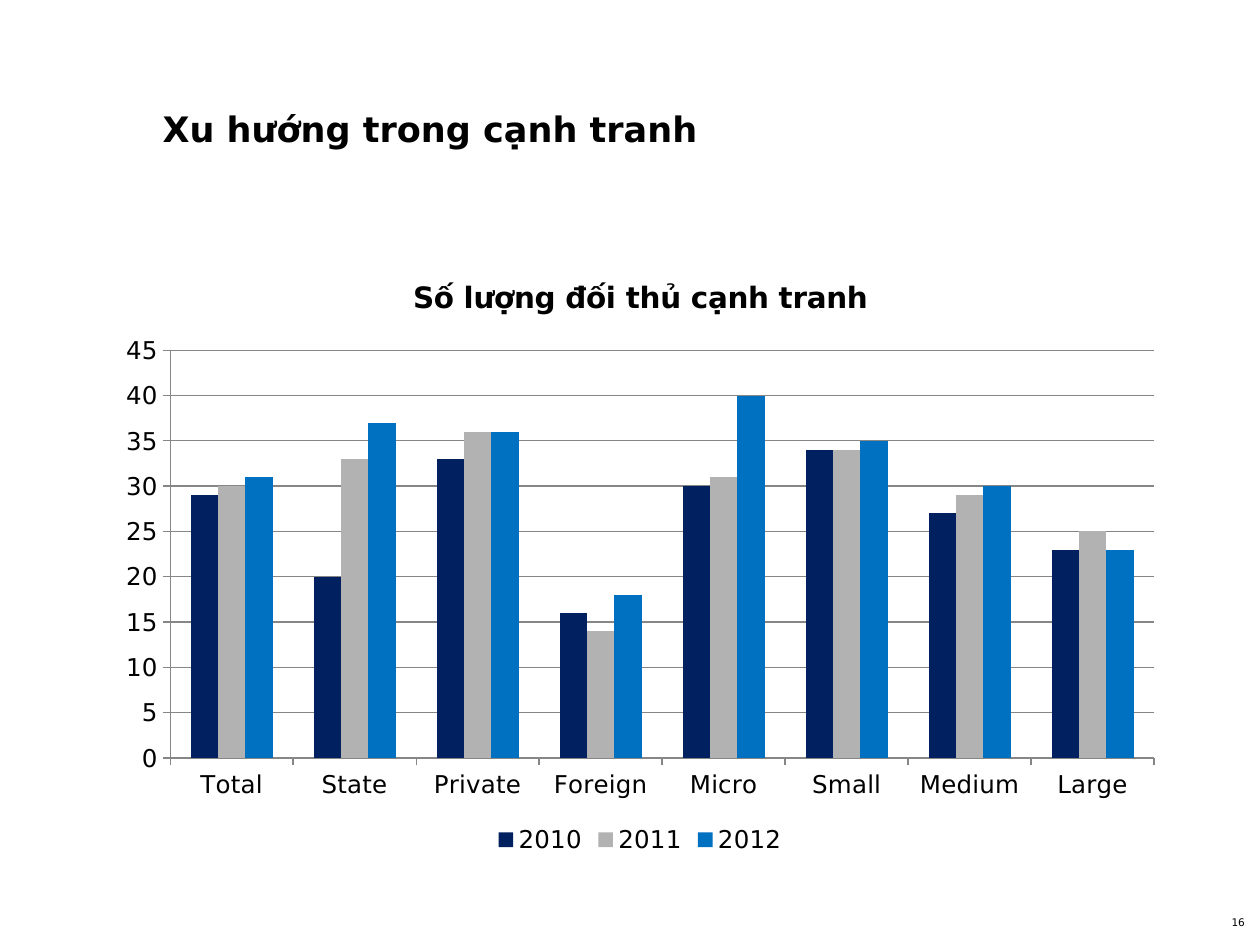
from pptx import Presentation
from pptx.chart.data import CategoryChartData
from pptx.dml.color import RGBColor
from pptx.enum.chart import XL_CHART_TYPE, XL_LEGEND_POSITION, XL_TICK_MARK
from pptx.enum.text import MSO_ANCHOR, PP_ALIGN
from pptx.util import Inches, Pt

BLACK = RGBColor(0x00, 0x00, 0x00)
NAVY = RGBColor(0x00, 0x20, 0x60)
SILVER = RGBColor(0xB2, 0xB2, 0xB2)
BLUE = RGBColor(0x00, 0x70, 0xC0)
AXIS_GRAY = RGBColor(0x86, 0x86, 0x86)
FONT = "DejaVu Sans"
CLUSTERED = XL_CHART_TYPE.COLUMN_CLUSTERED
BOTTOM = XL_LEGEND_POSITION.BOTTOM
OUTSIDE = XL_TICK_MARK.OUTSIDE
MIDDLE, TOP = MSO_ANCHOR.MIDDLE, MSO_ANCHOR.TOP
LEFT, RIGHT = PP_ALIGN.LEFT, PP_ALIGN.RIGHT

CATEGORIES = ["Total", "State", "Private", "Foreign",
              "Micro", "Small", "Medium", "Large"]
YEARS = [
    ("2010", [29, 20, 33, 16, 30, 34, 27, 23], NAVY),
    ("2011", [30, 33, 36, 14, 31, 34, 29, 25], SILVER),
    ("2012", [31, 37, 36, 18, 40, 35, 30, 23], BLUE),
]


def style_font(font, size, bold=False):
    font.name = FONT
    font.size = Pt(size)
    font.bold = bold
    font.color.rgb = BLACK


def add_text(slide, text, left, top, width, height, size, bold, align, anchor):
    frame = slide.shapes.add_textbox(
        Inches(left), Inches(top), Inches(width), Inches(height)).text_frame
    frame.margin_left = frame.margin_right = 0
    frame.margin_top = frame.margin_bottom = 0
    frame.word_wrap = True
    frame.vertical_anchor = anchor
    frame.text = text
    paragraph = frame.paragraphs[0]
    paragraph.alignment = align
    style_font(paragraph.runs[0].font, size, bold)


prs = Presentation()
prs.slide_width = Inches(10)
prs.slide_height = Inches(7.5)
slide = prs.slides.add_slide(prs.slide_layouts[6])

add_text(slide, "Xu hướng trong cạnh tranh", 1.29, 0.67, 6.7, 0.7,
         20, True, LEFT, MIDDLE)
add_text(slide, "16", 9.42, 7.27, 0.46, 0.17, 6, False, RIGHT, TOP)

competitors = CategoryChartData()
competitors.categories = CATEGORIES
for year, counts, color in YEARS:
    competitors.add_series(year, counts)

chart = slide.shapes.add_chart(
    CLUSTERED, Inches(0.83), Inches(2.02), Inches(8.5), Inches(4.8),
    competitors).chart
style_font(chart.font, 14)

chart.has_title = True
heading = chart.chart_title.text_frame
heading.text = "Số lượng đối thủ cạnh tranh"
style_font(heading.paragraphs[0].runs[0].font, 16.8, True)
chart.chart_title.include_in_layout = False

chart.has_legend = True
chart.legend.position = BOTTOM
chart.legend.include_in_layout = False

plot = chart.plots[0]
plot.gap_width = 150
plot.overlap = 0
plot.vary_by_categories = False
for series, (year, counts, color) in zip(plot.series, YEARS):
    series.format.fill.solid()
    series.format.fill.fore_color.rgb = color

for axis in (chart.category_axis, chart.value_axis):
    axis.major_tick_mark = OUTSIDE
    axis.format.line.color.rgb = AXIS_GRAY
    axis.format.line.width = Pt(0.75)

count_axis = chart.value_axis
count_axis.minimum_scale = 0
count_axis.maximum_scale = 45
count_axis.major_unit = 5
count_axis.has_major_gridlines = True
count_axis.major_gridlines.format.line.color.rgb = AXIS_GRAY
count_axis.major_gridlines.format.line.width = Pt(0.75)

prs.save("out.pptx")
